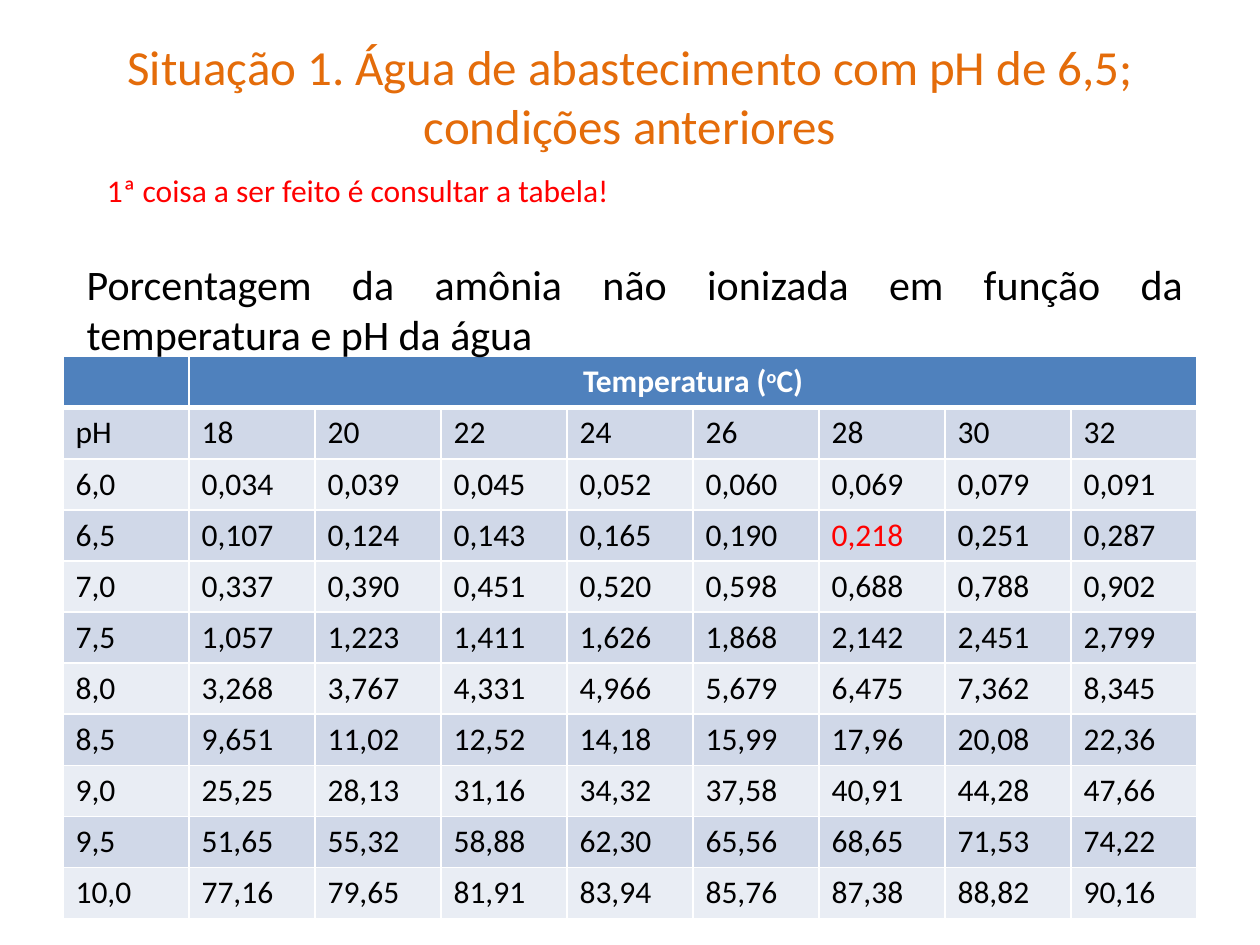
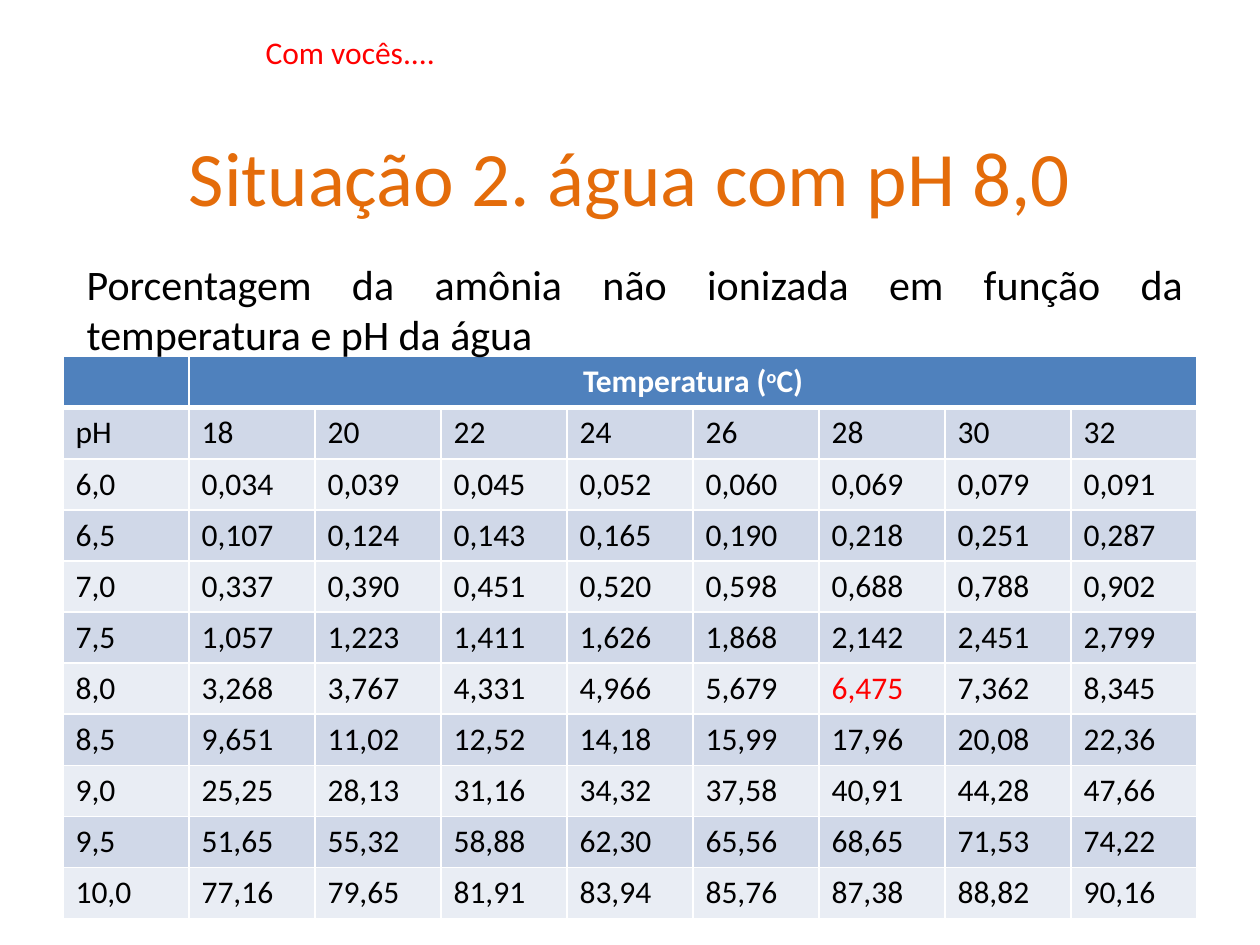
from lxml import etree
from pptx import Presentation
from pptx.dml.color import RGBColor
from pptx.enum.text import MSO_ANCHOR, MSO_AUTO_SIZE, PP_ALIGN
from pptx.oxml.ns import qn
from pptx.util import Inches, Pt

LEFT, CENTER, JUSTIFY = PP_ALIGN.LEFT, PP_ALIGN.CENTER, PP_ALIGN.JUSTIFY
MIDDLE = MSO_ANCHOR.MIDDLE
GROW = MSO_AUTO_SIZE.SHAPE_TO_FIT_TEXT
TITLE_ONLY = 5

FONT = "Calibri"
ORANGE, RED, BLACK, WHITE = "E46C0A", "FF0000", "000000", "FFFFFF"
HEADER_FILL = "4F81BD"
BAND_FILLS = ["D0D8E8", "E9EDF4"]

CAPTION = "Porcentagem da amônia não ionizada em função da temperatura e pH da água"
CAPTION_BOX = (0.59, 2, 8.9, 0.91)
TABLE_BOX = (0.5, 2.83, 9, 4.46)
AMMONIA_ROWS = [line.split() for line in """
pH 18 20 22 24 26 28 30 32
6,0 0,034 0,039 0,045 0,052 0,060 0,069 0,079 0,091
6,5 0,107 0,124 0,143 0,165 0,190 0,218 0,251 0,287
7,0 0,337 0,390 0,451 0,520 0,598 0,688 0,788 0,902
7,5 1,057 1,223 1,411 1,626 1,868 2,142 2,451 2,799
8,0 3,268 3,767 4,331 4,966 5,679 6,475 7,362 8,345
8,5 9,651 11,02 12,52 14,18 15,99 17,96 20,08 22,36
9,0 25,25 28,13 31,16 34,32 37,58 40,91 44,28 47,66
9,5 51,65 55,32 58,88 62,30 65,56 68,65 71,53 74,22
10,0 77,16 79,65 81,91 83,94 85,76 87,38 88,82 90,16
""".strip().splitlines()]
HIGHLIGHT_TEMPERATURE = "28"

SITUATIONS = [
    {"title": "Situação 1. Água de abastecimento com pH de 6,5; condições anteriores",
     "title_box": (0.5, 0.13, 9, 1.25), "title_size": 28,
     "note": "1ª coisa a ser feito é consultar a tabela!",
     "note_box": (0.75, 1.31, 4.72, 0.4), "ph": "6,5"},
    {"title": "Situação 2. água com pH 8,0",
     "title_box": (0.5, 0.77, 9, 1.25), "title_size": 44,
     "note": "Com vocês....",
     "note_box": (2.01, 0.21, 3.94, 0.4), "ph": "8,0"},
]


def color(hex_value):
    """Turn a hex string into a colour."""
    return RGBColor.from_string(hex_value)


def write(paragraph, text, size, hex_value, align=LEFT, bold=False):
    """Add a formatted run to a paragraph and return it."""
    paragraph.alignment = align
    run = paragraph.add_run()
    run.text = text
    for name, value in {"name": FONT, "size": Pt(size), "bold": bold}.items():
        setattr(run.font, name, value)
    run.font.color.rgb = color(hex_value)
    return run


def add_title(slide, box, text, size):
    """Place and format the title placeholder."""
    title = slide.shapes.title
    for name, value in zip(("left", "top", "width", "height"), box):
        setattr(title, name, Inches(value))
    title.text_frame.vertical_anchor = MIDDLE
    write(title.text_frame.paragraphs[0], text, size, ORANGE, CENTER)


def add_text(slide, box, text, size, hex_value, align=LEFT):
    """Add a wrapping text box."""
    frame = slide.shapes.add_textbox(*map(Inches, box)).text_frame
    frame.word_wrap = True
    frame.auto_size = GROW
    write(frame.paragraphs[0], text, size, hex_value, align)


def style_cell(cell, fill, widths):
    """Give a cell white borders of the given widths and a solid fill."""
    properties = cell._tc.get_or_add_tcPr()
    for side, width in widths.items():
        line = etree.SubElement(properties, qn(f"a:ln{side}"), w=str(Pt(width)))
        solid = etree.SubElement(line, qn("a:solidFill"))
        etree.SubElement(solid, qn("a:srgbClr"), val=WHITE)
    cell.fill.solid()
    cell.fill.fore_color.rgb = color(fill)


def add_ammonia_table(slide, box, highlight_ph):
    """Add the ammonia table with one value in red."""
    row_count, column_count = len(AMMONIA_ROWS) + 1, len(AMMONIA_ROWS[0])
    table = slide.shapes.add_table(row_count, column_count, *map(Inches, box)).table
    for row in table.rows:
        row.height = Inches(box[3] / row_count)

    for column in range(column_count):
        style_cell(table.cell(0, column), HEADER_FILL, {"L": 1, "R": 1, "T": 1, "B": 3})
    header = table.cell(0, 1)
    header.merge(table.cell(0, column_count - 1))
    for text in ("Temperatura (", "o", "C)"):
        run = write(header.text_frame.paragraphs[0], text, 18, WHITE, CENTER, True)
        if text == "o":
            run.font._element.set("baseline", "30000")

    highlight_column = AMMONIA_ROWS[0].index(HIGHLIGHT_TEMPERATURE)
    for row, values in enumerate(AMMONIA_ROWS, 1):
        widths = {"L": 1, "R": 1, "T": 3 if row == 1 else 1, "B": 1}
        for column, value in enumerate(values):
            cell = table.cell(row, column)
            style_cell(cell, BAND_FILLS[(row - 1) % 2], widths)
            highlighted = values[0] == highlight_ph and column == highlight_column
            write(cell.text_frame.paragraphs[0], value, 18, RED if highlighted else BLACK)


def add_situation_slide(presentation, situation):
    """Add a slide with title, table, caption and note."""
    slide = presentation.slides.add_slide(presentation.slide_layouts[TITLE_ONLY])
    add_title(slide, situation["title_box"], situation["title"], situation["title_size"])
    add_ammonia_table(slide, TABLE_BOX, situation["ph"])
    add_text(slide, CAPTION_BOX, CAPTION, 24, BLACK, JUSTIFY)
    add_text(slide, situation["note_box"], situation["note"], 18, RED)


def main():
    """Build and save the presentation."""
    presentation = Presentation()
    presentation.slide_width = Inches(10)
    presentation.slide_height = Inches(7.5)
    for situation in SITUATIONS:
        add_situation_slide(presentation, situation)
    presentation.save("out.pptx")


if __name__ == "__main__":
    main()
